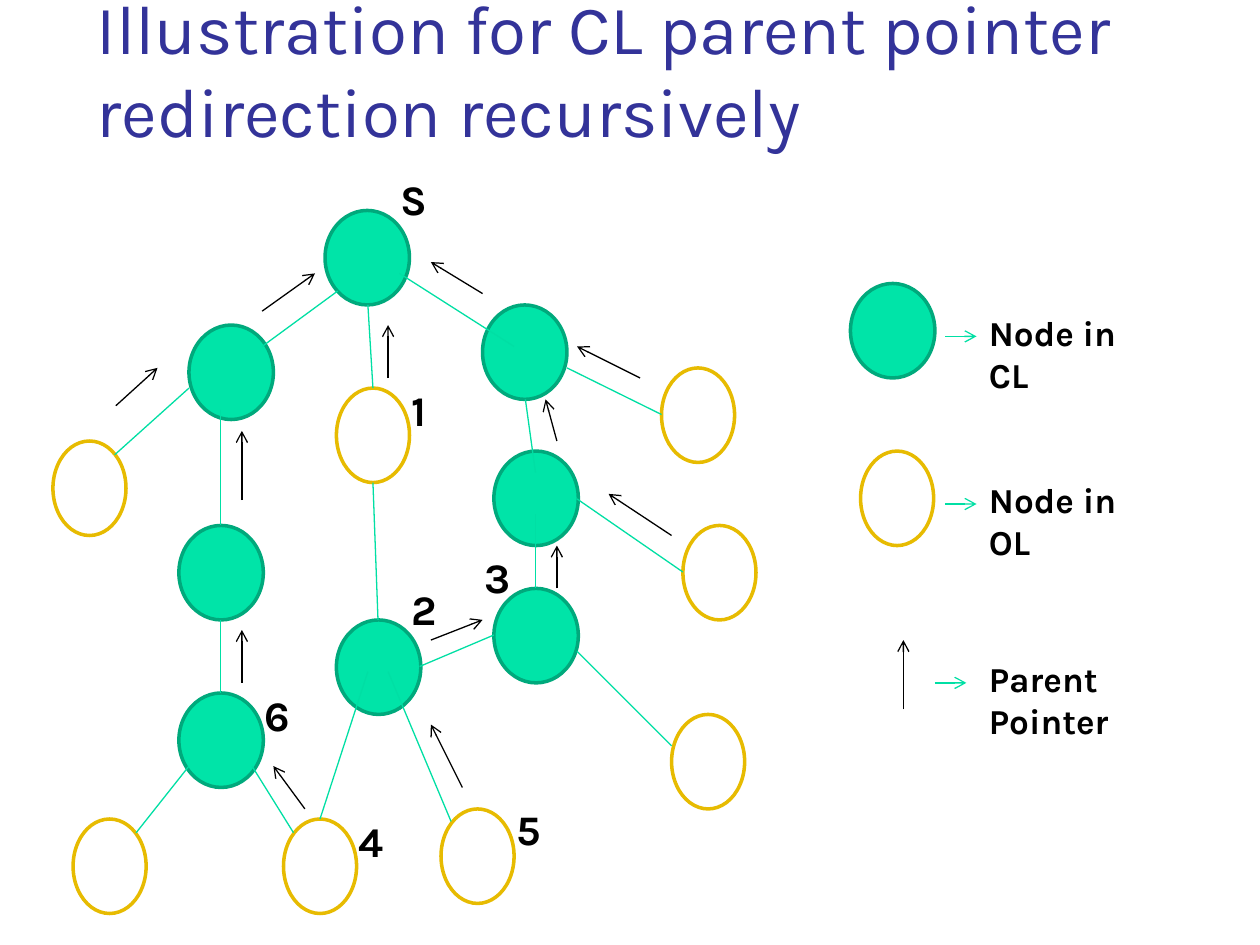
import pptx
import pptx.dml.color
import pptx.enum.shapes
import pptx.enum.text
import pptx.oxml
import pptx.util

CELL = 1 / 12
FONT = "Karla"
COLORS = {
    "title": "333399",
    "text": "000000",
    "pointer": "000000",
    "edge": "00DFA4",
    "closed": "00E4A8",
    "closed_line": "00A97C",
    "open": "FFFFFF",
    "open_line": "E7BB01",
}
NODE_COLUMNS = {"closed": 8, "open": 7}
NODE_ROWS = 9

CLOSED_NODES = [(31, 20), (18, 31), (32, 59), (46, 29), (17, 50), (17, 66),
                (47, 43), (47, 56), (81, 27)]
OPEN_NODES = [(5, 42), (32, 37), (27, 78), (7, 78), (42, 77), (65, 50),
              (63, 35), (64, 68), (82, 43)]
EDGES = [
    (32.2, 27.7, 25, 33), (35, 29, 35.5, 37), (21, 39, 21, 50),
    (35.5, 46, 36, 59), (18, 37, 10.9, 43.3), (21, 59, 21, 66),
    (18, 73, 13, 79.3), (24, 73, 28, 79.3), (35, 64, 30.5, 78),
    (37, 64, 43, 78.3), (54, 35, 63, 39.5), (55, 62, 64, 71),
    (47, 60.5, 40, 63.5), (55, 47.5, 65, 54.5), (38, 26, 49, 33),
    (50, 38, 51, 45), (51, 49, 51, 56),
]
POINTERS = [
    (11, 38.6, 15, 35), (25, 29.6, 30, 26), (23, 65, 23, 60),
    (23, 47.6, 23, 41), (29, 77, 26, 73), (44, 75, 41, 69),
    (41, 61, 46, 59), (64, 51, 58, 47), (61, 36, 55, 33),
    (46, 28, 41, 25), (37, 36, 37, 31), (53, 56, 53, 52),
    (53, 42, 52, 38), (86, 67.6, 86, 61),
]
NODE_LABELS = [("S", 37, 16), ("1", 38, 36), ("2", 38, 55), ("3", 45, 52),
               ("5", 48, 76), ("4", 33, 77), ("6", 24, 65)]
LEGEND = [("Node in CL", 29, 17.3, 90, 32), ("Node in OL", 45, 17.8, 90, 48),
          ("Parent Pointer", 62, 22.5, 89, 65)]


def grid(cells):
    return pptx.util.Inches(round(cells * CELL, 2))


def color(name):
    return pptx.dml.color.RGBColor.from_string(COLORS[name])


def add_node(slide, kind, column, row):
    node = slide.shapes.add_shape(
        pptx.enum.shapes.MSO_SHAPE.OVAL, grid(column), grid(row),
        grid(NODE_COLUMNS[kind]), grid(NODE_ROWS))
    node.shadow.inherit = False
    node.fill.solid()
    node.fill.fore_color.rgb = color(kind)
    node.line.color.rgb = color(kind + "_line")
    node.line.width = pptx.util.Pt(2)


def add_line(slide, ends, color_name, arrow=False):
    connector = slide.shapes.add_connector(
        pptx.enum.shapes.MSO_CONNECTOR.STRAIGHT, *map(grid, ends))
    connector.line.color.rgb = color(color_name)
    connector.line.width = pptx.util.Pt(0.75)
    properties = connector._element.spPr
    if arrow:
        tail = pptx.oxml.ns.qn("a:tailEnd")
        properties.ln.append(properties.ln.makeelement(tail, {"type": "arrow"}))
    properties.append(properties.makeelement(pptx.oxml.ns.qn("a:effectLst"), {}))


def add_text(slide, text, box, size, color_name="text", bold=True, wrap=True):
    shape = slide.shapes.add_textbox(*map(grid, box))
    frame = shape.text_frame
    frame.word_wrap = wrap
    frame.text = text
    font = frame.paragraphs[0].font
    font.name = FONT
    font.size = pptx.util.Pt(size)
    font.bold = bold
    font.color.rgb = color(color_name)
    return shape


def add_title(slide, text):
    title = add_text(slide, text, (8, 6, 102, 9), 39.6, "title", bold=False)
    title.text_frame.vertical_anchor = pptx.enum.text.MSO_ANCHOR.BOTTOM


def add_legend_entry(slide, text, row, columns, arrow_column, arrow_row):
    add_text(slide, text, (93, row, columns, 5.3), 20)
    ends = (arrow_column, arrow_row, arrow_column + 3, arrow_row)
    add_line(slide, ends, "edge", arrow=True)


def main():
    presentation = pptx.Presentation()
    presentation.slide_width = pptx.util.Inches(10)
    presentation.slide_height = pptx.util.Inches(7.5)
    slide = presentation.slides.add_slide(presentation.slide_layouts[6])

    add_title(slide, "Illustration for CL parent pointer redirection recursively")
    for kind, positions in (("closed", CLOSED_NODES), ("open", OPEN_NODES)):
        for column, row in positions:
            add_node(slide, kind, column, row)
    for ends in EDGES:
        add_line(slide, ends, "edge")
    for ends in POINTERS:
        add_line(slide, ends, "pointer", arrow=True)
    for text, column, row in NODE_LABELS:
        add_text(slide, text, (column, row, 4.4, 6), 24, wrap=False)
    for entry in LEGEND:
        add_legend_entry(slide, *entry)

    presentation.save("out.pptx")


if __name__ == "__main__":
    main()
